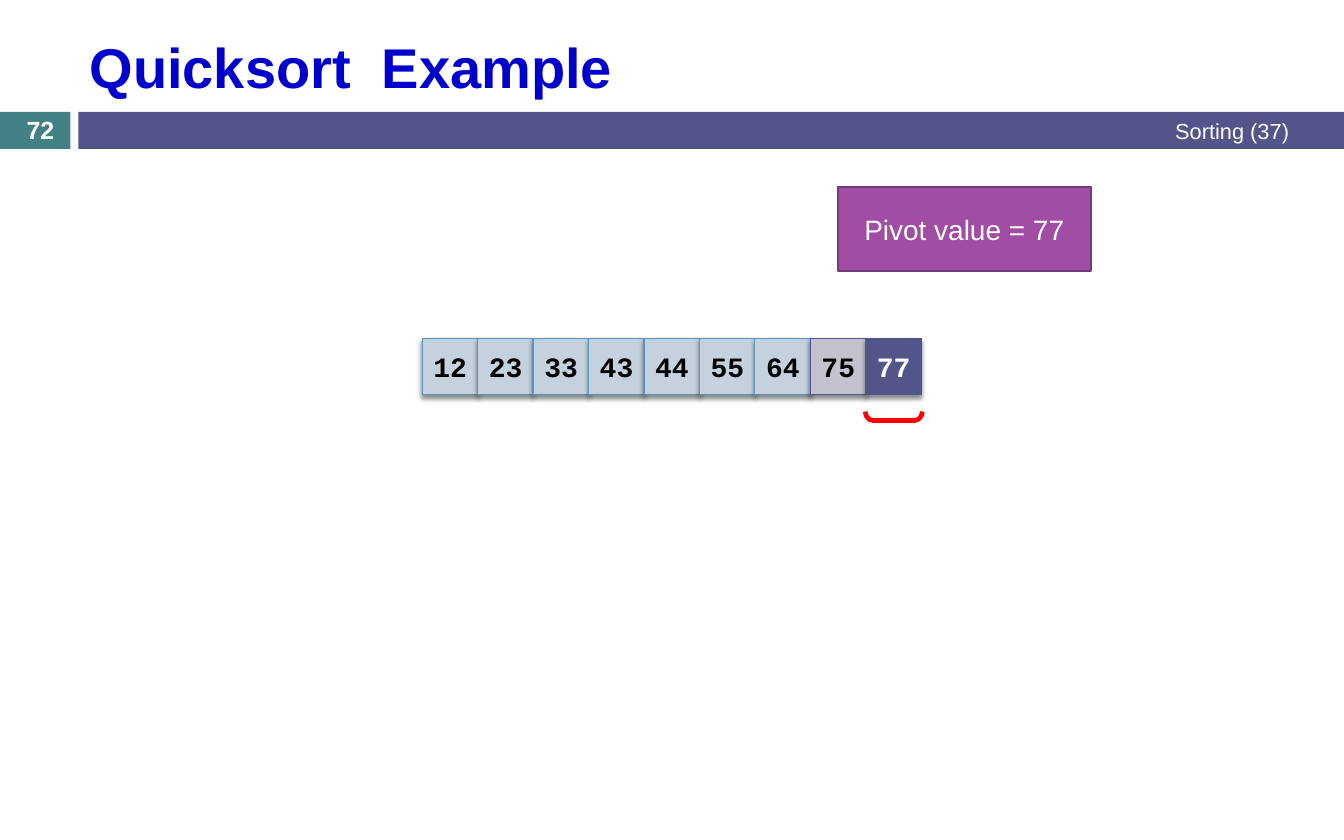
from dataclasses import dataclass

from lxml import etree
from pptx import Presentation
from pptx.dml.color import RGBColor
from pptx.enum import shapes, text
from pptx.oxml import ns
from pptx.util import Inches, Pt


@dataclass(frozen=True)
class Theme:
    heading: str = "0000CC"
    band: str = "53548A"
    number_band: str = "438086"
    sorted_cell: str = "C4D2DE"
    sorted_edge: str = "5C92B5"
    placed_cell: str = "C3C3CF"
    pivot: str = "A04DA3"
    pivot_edge: str = "763979"
    marker: str = "FF0000"
    dark: str = "000000"
    light: str = "FFFFFF"
    body_font: str = "Arial"
    cell_font: str = "Courier New"
    title_size: int = 36
    label_size: int = 18
    number_size: int = 16
    footer_size: int = 14


THEME = Theme()
WIDTH, HEIGHT = 12, 7.5
CELL, PITCH = 0.5, 0.495
ROW_LEFT, ROW_TOP = 3.77, 3.02
BAND_TOP, BAND_HEIGHT = 1, 0.33
VALUES = (12, 23, 33, 43, 44, 55, 64, 75, 77)


def box(*lengths):
    return [Inches(length) for length in lengths]


def write(shape, wording, size, color, bold=False,
          align=text.PP_ALIGN.CENTER, font=THEME.body_font):
    frame = shape.text_frame
    frame.text = wording
    frame.word_wrap = True
    frame.auto_size = text.MSO_AUTO_SIZE.NONE
    frame.vertical_anchor = text.MSO_ANCHOR.MIDDLE
    paragraph = frame.paragraphs[0]
    paragraph.alignment = align
    paragraph.font.name = font
    paragraph.font.size = Pt(size)
    paragraph.font.bold = bold
    paragraph.font.color.rgb = RGBColor.from_string(color)


def add_block(parent, place, fill, edge=None, weight=0.79):
    block = parent.add_shape(shapes.MSO_SHAPE.RECTANGLE, *box(*place))
    block.shadow.inherit = False
    block.fill.solid()
    block.fill.fore_color.rgb = RGBColor.from_string(fill)
    if edge:
        block.line.color.rgb = RGBColor.from_string(edge)
        block.line.width = Pt(weight)
    else:
        block.line.fill.background()
    return block


def add_label(slide, place, wording, size, **style):
    label = slide.shapes.add_textbox(*box(*place))
    write(label, wording, size, THEME.light, **style)


def add_drop_shadow(block):
    effects = block._element.spPr.find(ns.qn("a:effectLst"))
    shadow = etree.SubElement(
        effects, ns.qn("a:outerShdw"), blurRad=str(Pt(3)), dist=str(Pt(2.4)),
        dir="5400000", algn="ctr", rotWithShape="0")
    tint = etree.SubElement(shadow, ns.qn("a:srgbClr"), val=THEME.dark)
    etree.SubElement(tint, ns.qn("a:alpha"), val="45000")


def add_array(slide):
    looks = [(THEME.sorted_cell, THEME.sorted_edge, THEME.dark)] * (len(VALUES) - 2)
    looks += [(THEME.placed_cell, THEME.band, THEME.dark),
              (THEME.band, THEME.band, THEME.light)]
    array = slide.shapes.add_group_shape().shapes
    for column, (value, (fill, edge, ink)) in enumerate(zip(VALUES, looks)):
        place = (ROW_LEFT + column * PITCH, ROW_TOP, CELL, CELL)
        cell = add_block(array, place, fill, edge)
        add_drop_shadow(cell)
        write(cell, str(value), THEME.label_size, ink, bold=True, font=THEME.cell_font)
        cell.text_frame.margin_left = cell.text_frame.margin_right = 0


def add_marker(slide):
    marker = slide.shapes.add_shape(
        shapes.MSO_SHAPE.LEFT_BRACKET, *box(7.94, 3.46, 0.08, 0.51))
    marker.rotation = 270
    marker.adjustments[0] = 0.9
    marker.shadow.inherit = False
    marker.fill.background()
    marker.line.color.rgb = RGBColor.from_string(THEME.marker)
    marker.line.width = Pt(3)


def add_title(slide, wording):
    title = slide.shapes.title
    title.left, title.top, title.width, title.height = box(0.7, 0.19, 10.91, 0.8)
    write(title, wording, THEME.title_size, THEME.heading, bold=True,
          align=text.PP_ALIGN.LEFT)


def add_header_band(slide):
    add_block(slide.shapes, (0, BAND_TOP, 0.63, BAND_HEIGHT), THEME.number_band)
    add_block(slide.shapes, (0.7, BAND_TOP, WIDTH - 0.7, BAND_HEIGHT), THEME.band)
    add_label(slide, (4.5, 0.99, 7.11, 0.35), "Sorting (37)", THEME.footer_size,
              align=text.PP_ALIGN.RIGHT)
    add_label(slide, (0, 1.01, 0.72, 0.3), "72", THEME.number_size, bold=True)


def main():
    deck = Presentation()
    deck.slide_width, deck.slide_height = box(WIDTH, HEIGHT)
    slide = deck.slides.add_slide(deck.slide_layouts.get_by_name("Title Only"))
    add_title(slide, "Quicksort  Example")
    add_header_band(slide)
    add_array(slide)
    pivot = add_block(slide.shapes, (7.48, 1.67, 2.26, 0.75),
                      THEME.pivot, THEME.pivot_edge, 1.5)
    write(pivot, "Pivot value = 77", THEME.label_size, THEME.light)
    add_marker(slide)
    deck.save("out.pptx")


if __name__ == "__main__":
    main()
